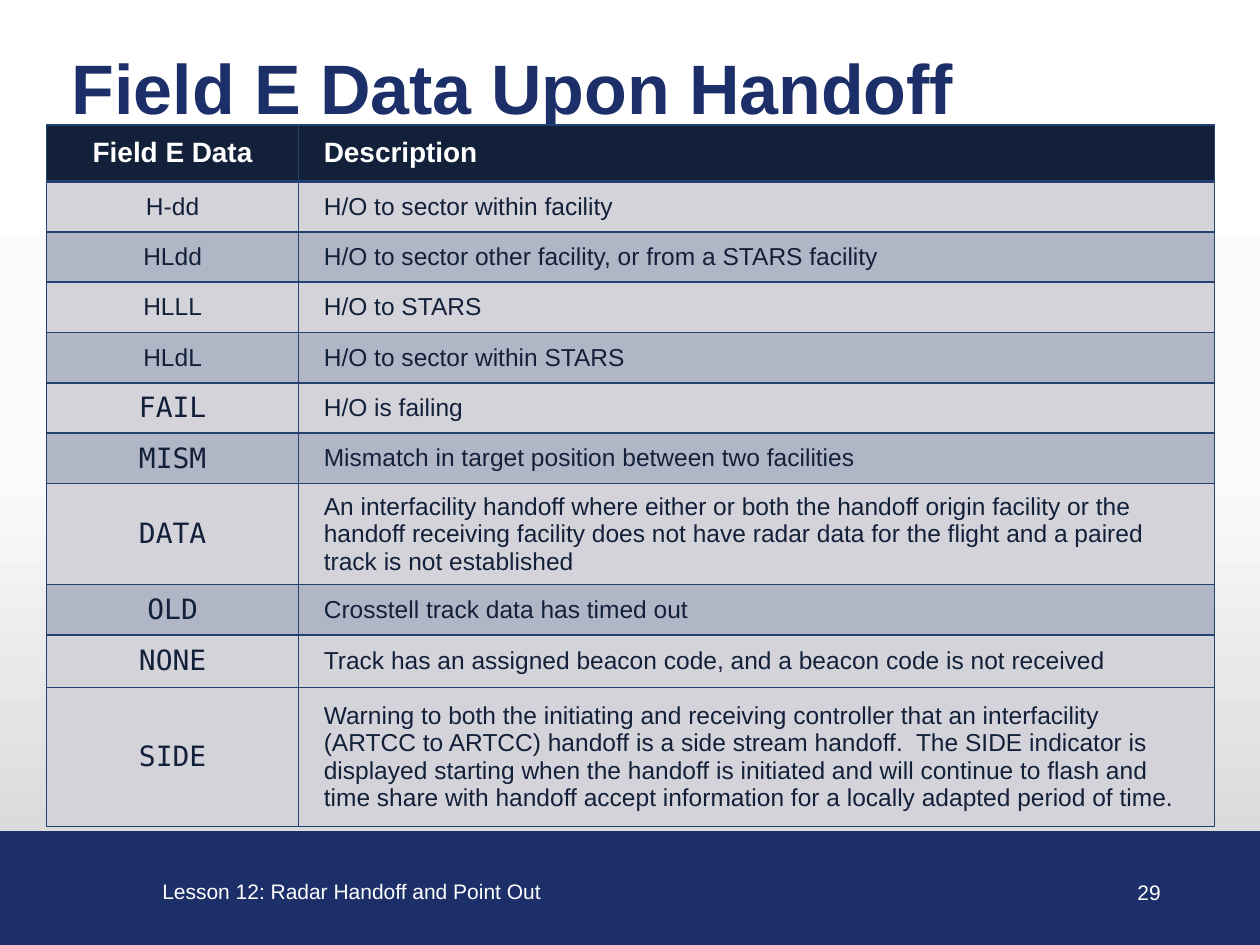
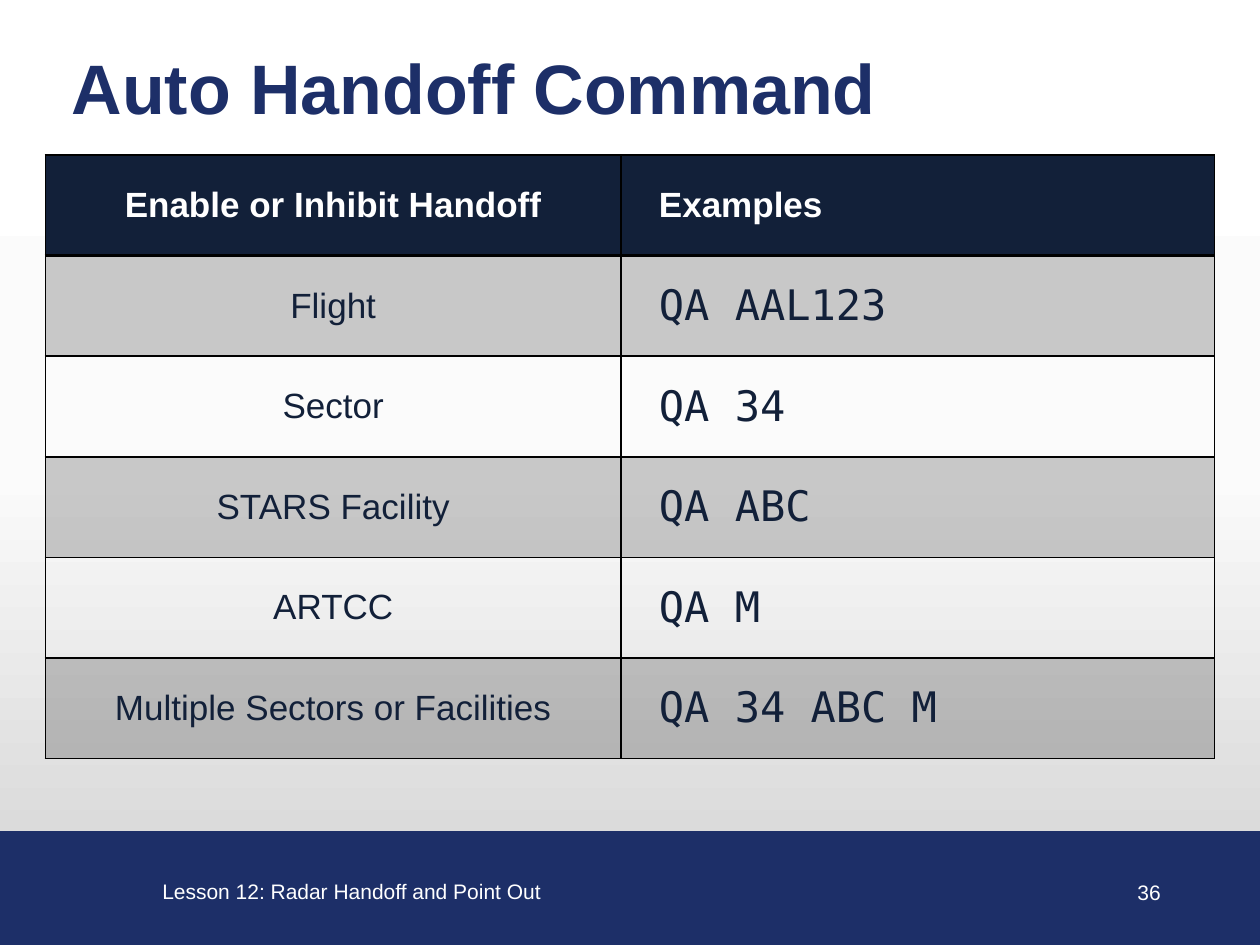
from copy import deepcopy

from pptx import Presentation
from pptx import util as u
from pptx.dml.color import RGBColor
from pptx.enum import shapes, text
from pptx.oxml import ns, xmlchemy

NAVY = RGBColor(0x1D, 0x2F, 0x68)
INK = RGBColor(0x12, 0x20, 0x39)
WHITE = RGBColor(0xFF, 0xFF, 0xFF)
BLACK = RGBColor(0x00, 0x00, 0x00)
RULE_BLUE = RGBColor(0x23, 0x41, 0x71)
BAND_LIGHT = RGBColor(0xD4, 0xD3, 0xDA)
BAND_DARK = RGBColor(0xB1, 0xB6, 0xC7)
BACKDROP = [
    (0, WHITE),
    (0.5, RGBColor(0xFB, 0xFB, 0xFB)),
    (1, RGBColor(0xD0, 0xD0, 0xD0)),
]

LESSON = "Lesson 12: Radar Handoff and Point Out"
LEFT, CENTER, RIGHT = text.PP_ALIGN.LEFT, text.PP_ALIGN.CENTER, text.PP_ALIGN.RIGHT

FIELD_ROWS = [
    ("Field E Data", "Description"),
    ("H-dd", "H/O to sector within facility"),
    ("HLdd", "H/O to sector other facility, or from a STARS facility"),
    ("HLLL", "H/O to STARS"),
    ("HLdL", "H/O to sector within STARS"),
    ("FAIL", "H/O is failing"),
    ("MISM", "Mismatch in target position between two facilities"),
    ("DATA", "An interfacility handoff where either or both the handoff origin "
             "facility or the handoff receiving facility does not have radar data "
             "for the flight and a paired track is not established"),
    ("OLD", "Crosstell track data has timed out"),
    ("NONE", "Track has an assigned beacon code, and a beacon code is not received"),
    ("SIDE", "Warning to both the initiating and receiving controller that an "
             "interfacility (ARTCC to ARTCC) handoff is a side stream handoff.  "
             "The SIDE indicator is displayed starting when the handoff is "
             "initiated and will continue to flash and time share with handoff "
             "accept information for a locally adapted period of time."),
]
COMMAND_ROWS = [
    ("Enable or Inhibit Handoff", "Examples"),
    ("Flight", "QA AAL123"),
    ("Sector", "QA 34"),
    ("STARS Facility", "QA ABC"),
    ("ARTCC", "QA M"),
    ("Multiple Sectors or Facilities", "QA 34 ABC M"),
]


class LessonDeck:
    font = "Arial"
    code_font = "DejaVu Sans Mono"

    def __init__(self):
        self.deck = Presentation()
        self.deck.slide_width = u.Inches(10)
        self.deck.slide_height = u.Inches(7.5)
        self.page = None
        self.backdrop()

    def across(self, percent):
        return round(self.deck.slide_width * percent / 100)

    def down(self, percent):
        return round(self.deck.slide_height * percent / 100)

    def place(self, left, top, width, height):
        return self.across(left), self.down(top), self.across(width), self.down(height)

    def backdrop(self):
        master = self.deck.slide_master
        fill = master.background.fill
        fill.gradient()
        fill.gradient_angle = 270
        stops = master.element.find(".//" + ns.qn("a:gsLst"))
        stops.append(deepcopy(stops[-1]))
        for stop, (position, color) in zip(fill.gradient_stops, BACKDROP):
            stop.position = position
            stop.color.rgb = color

    def style(self, para, size, color, bold=False, align=LEFT, font=None):
        para.alignment = align
        for span in para.runs:
            span.font.name = font or self.font
            span.font.size = u.Pt(size)
            span.font.bold = bold
            span.font.color.rgb = color

    def start(self, heading, number):
        self.page = self.deck.slides.add_slide(self.deck.slide_layouts[5])
        self.band()
        self.label(LESSON, (11.9, 92.27, 44.6, 4))
        self.label(number, (86.9, 92.4, 6.2, 4), RIGHT)
        self.title(heading)

    def band(self):
        band = self.page.shapes.add_shape(
            shapes.MSO_SHAPE.RECTANGLE, *self.place(0, 88, 100, 12))
        band.shadow.inherit = False
        band.fill.solid()
        band.fill.fore_color.rgb = NAVY
        band.line.color.rgb = NAVY
        band.line.width = u.Pt(0.75)

    def label(self, words, area, align=LEFT):
        box = self.page.shapes.add_textbox(*self.place(*area))
        box.text_frame.word_wrap = True
        box.text_frame.text = words
        self.style(box.text_frame.paragraphs[0], 12, WHITE, align=align)

    def title(self, words):
        box = self.page.shapes.title
        box.left, box.top, box.width, box.height = self.place(4.7, 5.07, 92.7, 8.13)
        frame = box.text_frame
        frame.text = words
        frame.auto_size = text.MSO_AUTO_SIZE.NONE
        frame.vertical_anchor = text.MSO_ANCHOR.MIDDLE
        self.style(frame.paragraphs[0], 40, NAVY, bold=True)

    def table(self, rows, corner, columns, heights, fills, rule, sizes, inset, codes):
        frame = self.page.shapes.add_table(
            len(rows), len(columns), *self.place(*corner, sum(columns), sum(heights)))
        table = frame.table
        table.first_row = table.horz_banding = False
        for column, width in zip(table.columns, columns):
            column.width = self.across(width)
        for row, height in zip(table.rows, heights):
            row.height = self.down(height)
        head_size, body_size, code_size = sizes
        for r, entries in enumerate(rows):
            for c, words in enumerate(entries):
                cell = table.cell(r, c)
                cell.text = words
                cell.vertical_anchor = text.MSO_ANCHOR.MIDDLE
                cell.margin_left = cell.margin_right = u.Inches(inset if c else 0.1)
                para = cell.text_frame.paragraphs[0]
                align = LEFT if c else CENTER
                if r == 0:
                    self.style(para, head_size, WHITE, True, align)
                elif words in codes:
                    self.style(para, code_size, INK, align=align, font=self.code_font)
                else:
                    self.style(para, body_size, INK, align=align)
                self.fill(cell, fills[r])
                self.borders(cell, rule, top=2 if r == 1 else 1, bottom=1 if r else 2)

    def fill(self, cell, color):
        if color is None:
            cell.fill.background()
            return
        cell.fill.solid()
        cell.fill.fore_color.rgb = color
        if color == BLACK:
            tone = cell._tc.tcPr.find(".//" + ns.qn("a:srgbClr"))
            tone.append(xmlchemy.OxmlElement("a:alpha"))
            tone[-1].set("val", "20000")

    def borders(self, cell, color, top, bottom):
        sides = {"a:lnL": 1, "a:lnR": 1, "a:lnT": top, "a:lnB": bottom}
        for place, (side, width) in enumerate(sides.items()):
            line = xmlchemy.OxmlElement(side)
            line.set("w", str(u.Pt(width)))
            paint = xmlchemy.OxmlElement("a:solidFill")
            tone = xmlchemy.OxmlElement("a:srgbClr")
            tone.set("val", str(color))
            paint.append(tone)
            line.append(paint)
            cell._tc.get_or_add_tcPr().insert(place, line)


def main():
    lesson = LessonDeck()

    lesson.start("Field E Data Upon Handoff", "29")
    lesson.table(
        FIELD_ROWS, (3.7, 13.2), (20, 72.7),
        [6] + [5.33] * 6 + [10.67, 5.33, 5.6, 14.67],
        [INK] + [BAND_LIGHT, BAND_DARK] * 4 + [BAND_LIGHT] * 2,
        RULE_BLUE, (16, 14, 16), 0.2,
        {"FAIL", "MISM", "DATA", "OLD", "NONE", "SIDE"})

    lesson.start("Auto Handoff Command", "36")
    lesson.table(
        COMMAND_ROWS, (3.6, 16.4), (45.7, 47.1),
        [10.65] * len(COMMAND_ROWS),
        [INK, BLACK, None, BLACK, None, BLACK],
        BLACK, (20, 20, 24), 0.3,
        {command for _, command in COMMAND_ROWS[1:]})

    lesson.deck.save("out.pptx")


if __name__ == "__main__":
    main()
